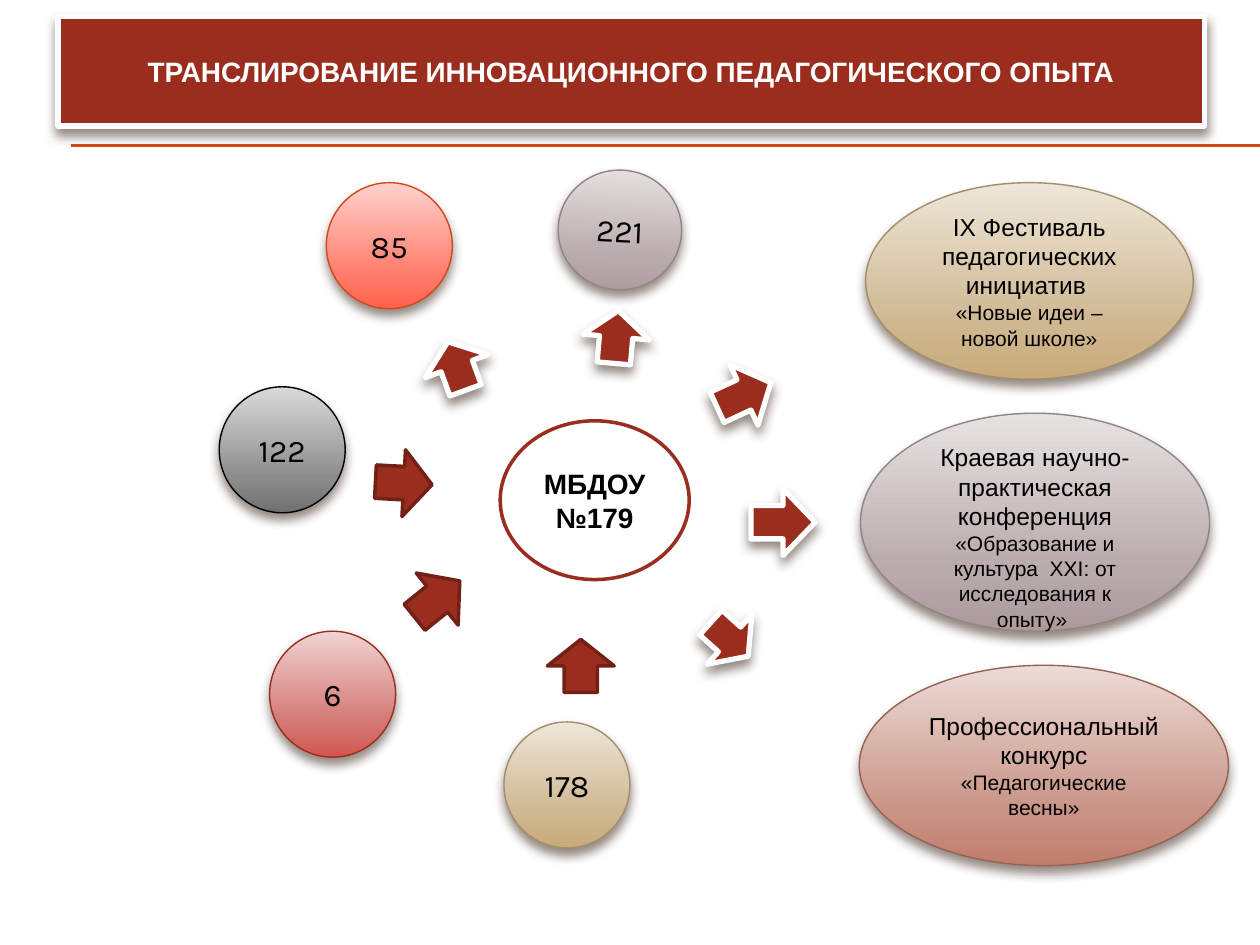
from copy import deepcopy

from pptx import Presentation
from pptx.dml.color import RGBColor
from pptx.enum.shapes import MSO_CONNECTOR as Line, MSO_SHAPE as Shape
from pptx.enum.text import MSO_ANCHOR as Anchor, PP_ALIGN as Align
from pptx.oxml import parse_xml
from pptx.oxml.ns import nsdecls, qn
from pptx.util import Inches, Pt

THEME = {
    "red": "9B2D1F", "dark_red": "732117", "orange": "D34817",
    "white": "FFFFFF", "black": "000000", "shadow": "4E3B30",
    "text_font": "Arial", "number_font": "Karla",
    "heading": 16, "number": 18, "event": 14, "event_name": 12,
    # Gradient colours at 0, 72 and 100 percent, then the outline
    "mauve": ("E7E2E2", "B9AAAB", "AD9A9B", "918485"),
    "sand": ("EEE6D9", "CFB791", "C9AB7A", "A28E6A"),
    "clay": ("ECDBD7", "C99487", "C17D6B", "956251"),
    "grey": ("DADADA", "8C8C8C", "707070", "000000"),
    "rose": ("F0D3D2", "D47874", "D15650", "9B2D1F"),
    "coral": ("FFD2CE", "FF7C6C", "FF624C", "D34817"),
}
STOPS = (0, 0.72, 1)


def add_figure(kind, place, fill, outline, width, shadow=True, turn=0):
    """Add a shape; fill is one colour or a tuple of gradient colours."""
    figure = page.shapes.add_shape(kind, *(Inches(v) for v in place))
    figure.rotation = turn
    figure.shadow.inherit = False
    if isinstance(fill, tuple):
        figure.fill.gradient()
        figure.fill.gradient_angle = 270
        stop_list = figure._element.spPr.find(".//" + qn("a:gsLst"))
        stop_list.insert(1, deepcopy(stop_list[0]))
        for stop, position, colour in zip(figure.fill.gradient_stops, STOPS, fill):
            stop.position = position
            stop.color.rgb = RGBColor.from_string(colour)
    else:
        figure.fill.solid()
        figure.fill.fore_color.rgb = RGBColor.from_string(fill)
    figure.line.color.rgb = RGBColor.from_string(outline)
    figure.line.width = Pt(width)
    if shadow:
        figure._element.spPr.find(qn("a:effectLst")).append(parse_xml(
            f'<a:outerShdw {nsdecls("a")} blurRad="{Pt(6)}" dist="{Pt(4)}" '
            f'dir="5400000" rotWithShape="0"><a:srgbClr val="{THEME["shadow"]}">'
            '<a:alpha val="60000"/></a:srgbClr></a:outerShdw>'))
    return figure


def write(figure, paragraphs, font, colour="black", bold=False):
    """Write centred paragraphs, each a list of (text, size) spans."""
    frame = figure.text_frame
    frame.word_wrap = True
    frame.vertical_anchor = Anchor.MIDDLE
    for index, spans in enumerate(paragraphs):
        para = frame.add_paragraph() if index else frame.paragraphs[0]
        para.alignment = Align.CENTER
        for text, size in spans:
            span = para.add_run()
            span.text = text
            span.font.color.rgb = RGBColor.from_string(THEME[colour])
            looks = {"name": THEME[font], "size": Pt(THEME[size]), "bold": bold}
            for name, value in looks.items():
                setattr(span.font, name, value)


deck = Presentation()
deck.slide_width, deck.slide_height = Inches(10), Inches(7.5)
page = deck.slides.add_slide(deck.slide_layouts[6])

# Double rule under the title
for y in (1.15, 1.16):
    rule = page.shapes.add_connector(
        Line.STRAIGHT, Inches(0.56), Inches(y), Inches(10), Inches(y))
    rule.line.color.rgb = RGBColor.from_string(THEME["orange"])
    rule.line.width = Pt(0.75)
    rule._element.spPr.append(parse_xml(f'<a:effectLst {nsdecls("a")}/>'))

# Title banner
banner = add_figure(Shape.RECTANGLE, (0.46, 0.13, 9.1, 0.87),
                    THEME["red"], THEME["white"], 3)
write(banner, [[("ТРАНСЛИРОВАНИЕ ИННОВАЦИОННОГО ПЕДАГОГИЧЕСКОГО ОПЫТА", "heading")]],
      "text_font", "white", True)

# Central institution
centre = add_figure(Shape.OVAL, (3.97, 3.34, 1.5, 1.26),
                    THEME["white"], THEME["red"], 2, shadow=False)
write(centre, [[("МБДОУ", "heading")], [("№179", "heading")]], "text_font", bold=True)

# Arrows: left, top, width, rotation, and whether the outline is white
ARROWS = [
    (4.68, 2.41, 0.42, 275, True),
    (3.42, 2.64, 0.41, 249.9, True),
    (5.67, 2.87, 0.47, 335.3, True),
    (5.96, 3.88, 0.51, 0, True),
    (5.59, 4.81, 0.4, 42, True),
    (2.98, 3.57, 0.45, 3.1, False),
    (3.24, 4.49, 0.46, 321.2, False),
    (4.4, 5.02, 0.42, 270, False),
]
for left, top, width, turn, white in ARROWS:
    add_figure(Shape.RIGHT_ARROW, (left, top, width, 0.53), THEME["red"],
               THEME["white" if white else "dark_red"], 3 if white else 2, white, turn)

# Number circles
CIRCLES = [
    ("221", (4.43, 1.35, 0.98, 0.95), "mauve", 2.6),
    ("85", (2.59, 1.45, 1, 1), "coral", 0),
    ("122", (1.74, 3.07, 1, 1), "grey", 0),
    ("6", (2.14, 5.01, 1, 1), "rose", 0),
    ("178", (4, 5.73, 1, 1), "sand", 0),
]
for number, place, tint, turn in CIRCLES:
    *fill, outline = THEME[tint]
    circle = add_figure(Shape.OVAL, place, tuple(fill), outline, 0.79, turn=turn)
    write(circle, [[(number, "number")]], "number_font")

# Event ovals: place, tint, top inset, paragraphs
EVENTS = [
    ((6.87, 1.45, 2.6, 1.56), "sand", 0.05,
     [[("IX Фестиваль педагогических инициатив ", "event")],
      [("«Новые идеи – новой школе»", "event_name")]]),
    ((6.83, 3.28, 2.77, 1.73), "mauve", 0.28,
     [[("Краевая научно-практическая конференция ", "event"),
       ("«Образование и культура  XXI: от исследования к опыту» ", "event_name")]]),
    ((6.82, 5.28, 2.93, 1.59), "clay", 0.05,
     [[("Профессиональный конкурс ", "event"),
       ("«Педагогические весны»", "event_name")]]),
]
for place, tint, inset, paragraphs in EVENTS:
    *fill, outline = THEME[tint]
    oval = add_figure(Shape.OVAL, place, tuple(fill), outline, 0.79)
    oval.text_frame.margin_top = Inches(inset)
    write(oval, paragraphs, "text_font")

deck.save("out.pptx")
